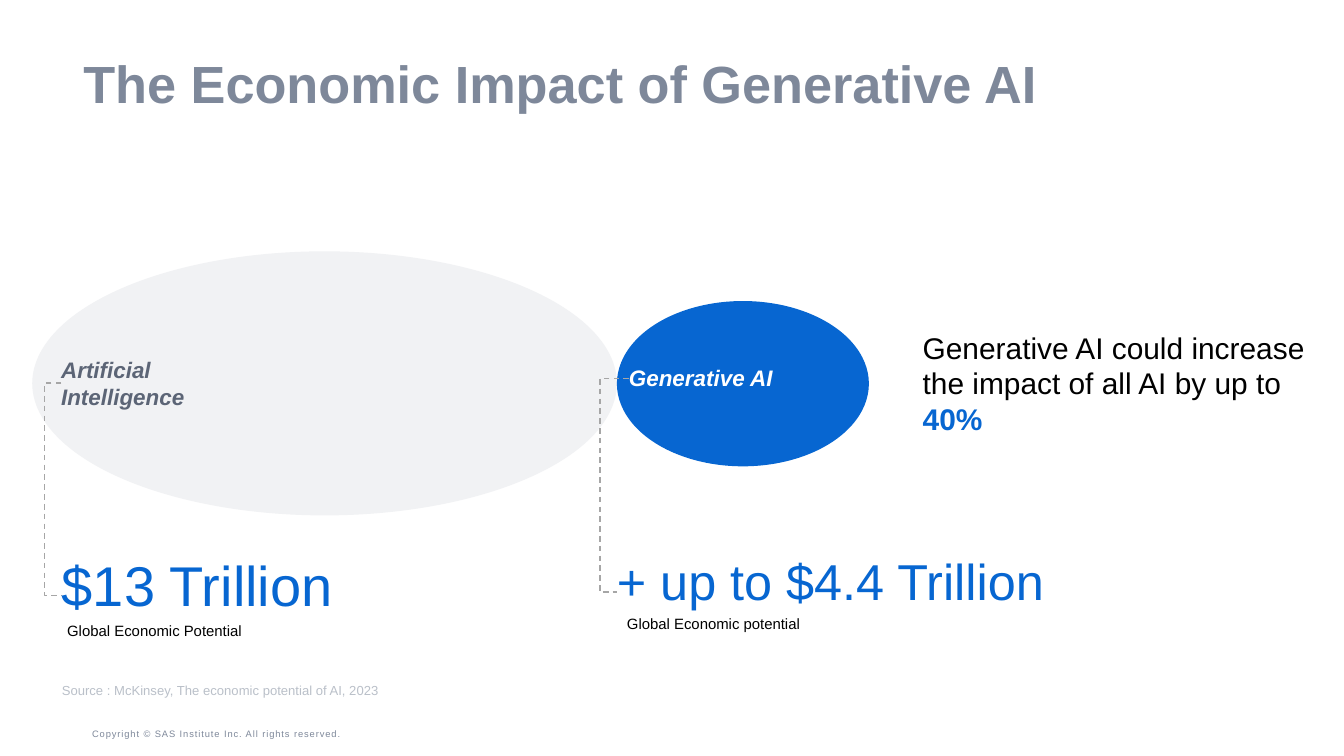
from dataclasses import dataclass

from lxml import etree
from pptx import Presentation
from pptx import util as u
from pptx.dml.color import RGBColor
from pptx.enum import dml, shapes, text
from pptx.oxml.ns import qn

BLUE = "0766D1"
SLATE = "7E889A"
BLACK = "000000"
MIDDLE = text.MSO_ANCHOR.MIDDLE
TOP = text.MSO_ANCHOR.TOP


@dataclass
class Label:
    words: str
    area: tuple[float, float, float, float]
    size: float
    color: str
    bold: bool = False
    italic: bool = False
    anchor: text.MSO_ANCHOR = TOP


@dataclass
class Ellipse:
    area: tuple[float, float, float, float]
    color: str


@dataclass
class Bracket:
    start: tuple[float, float]
    end: tuple[float, float]
    lane: float


@dataclass
class Figure:
    amount: Label
    caption: str
    indent: float


ELLIPSES = [
    Ellipse((0.48, 3.74, 8.7, 3.93), "F1F2F4"),
    Ellipse((9.18, 4.48, 3.75, 2.46), BLUE),
]
BRACKETS = [
    Bracket((9.36, 5.63), (9.18, 8.81), 8.93),
    Bracket((0.91, 5.7), (0.92, 8.86), 0.66),
]
LABELS = [
    Label("The Economic Impact of Generative AI", (1.24, 0.86, 17.25, 0.85), 56, SLATE,
          bold=True, anchor=MIDDLE),
    Label("Artificial Intelligence", (0.91, 5.3, 2.83, 0.81), 24, "5C6576",
          bold=True, italic=True, anchor=MIDDLE),
    Label("Generative AI", (9.36, 5.42, 2.27, 0.4), 24, "FFFFFF",
          bold=True, italic=True, anchor=MIDDLE),
    Label("Source : McKinsey, The economic potential of AI, 2023",
          (0.92, 10.16, 6.04, 0.24), 14, "BAC0C9"),
]
FIGURES = [
    Figure(Label("$13 Trillion", (0.92, 8.19, 4.89, 1.35), 60, BLUE),
           "Global Economic Potential", 0.08),
    Figure(Label("+ up to $4.4 Trillion", (9.18, 8.19, 7.91, 1.25), 54, BLUE),
           "Global Economic potential", 0.15),
]
COPYRIGHT = Label("Copyright © SAS Institute Inc. All rights reserved.",
                  (1.37, 10.83, 5.5, 0.17), 10, SLATE, anchor=text.MSO_ANCHOR.BOTTOM)
CLAIM = Label("Generative AI could increase", (13.73, 4.9, 5.79, 1.62), 32, BLACK)


def rgb(color: str) -> RGBColor:
    return RGBColor.from_string(color)


def format_span(span, size: float, color: str, bold: bool = False, italic: bool = False) -> None:
    span.font.name = "Arial"
    span.font.size = u.Pt(size)
    span.font.color.rgb = rgb(color)
    span.font.bold = bold
    span.font.italic = italic


def add_label(page, label: Label):
    box = page.shapes.add_textbox(*map(u.Inches, label.area))
    frame = box.text_frame
    frame.word_wrap = True
    frame.vertical_anchor = label.anchor
    frame.margin_left = frame.margin_right = frame.margin_top = frame.margin_bottom = 0
    frame.text = label.words
    format_span(frame.paragraphs[0].runs[0], label.size, label.color, label.bold, label.italic)
    return frame


def add_line(frame, words: str, size: float, color: str):
    para = frame.add_paragraph()
    para.text = words
    format_span(para.runs[0], size, color)
    return para


def add_ellipse(page, ellipse: Ellipse) -> None:
    shape = page.shapes.add_shape(shapes.MSO_SHAPE.OVAL, *map(u.Inches, ellipse.area))
    shape.shadow.inherit = False
    shape.fill.solid()
    shape.fill.fore_color.rgb = rgb(ellipse.color)
    shape.line.fill.background()


def add_bracket(page, bracket: Bracket) -> None:
    ends = map(u.Inches, (*bracket.start, *bracket.end))
    connector = page.shapes.add_connector(shapes.MSO_CONNECTOR.ELBOW, *ends)
    connector.line.color.rgb = rgb("A6A6A6")
    connector.line.width = u.Pt(1.5)
    connector.line.dash_style = dml.MSO_LINE.DASH
    left, right = bracket.start[0], bracket.end[0]
    bend = round((bracket.lane - left) / (right - left) * 100000)
    properties = connector._element.spPr
    guides = properties.find(qn("a:prstGeom")).find(qn("a:avLst"))
    etree.SubElement(guides, qn("a:gd"), name="adj1", fmla=f"val {bend}")
    etree.SubElement(properties, qn("a:effectLst"))


def add_figure(page, figure: Figure) -> None:
    frame = add_label(page, figure.amount)
    para = add_line(frame, figure.caption, 16, BLACK)
    para.space_before = u.Pt(4)
    para._p.get_or_add_pPr().set("marL", str(u.Inches(figure.indent)))


def add_claim(page) -> None:
    frame = add_label(page, CLAIM)
    para = add_line(frame, "the impact of all AI by up to ", CLAIM.size, CLAIM.color)
    span = para.add_run()
    span.text = "40%"
    format_span(span, CLAIM.size, BLUE, bold=True)


def add_copyright(page) -> None:
    frame = add_label(page, COPYRIGHT)
    frame.paragraphs[0].runs[0].font._element.set("spc", "100")


def main() -> None:
    deck = Presentation()
    deck.slide_width = u.Inches(20)
    deck.slide_height = u.Inches(11.25)
    page = deck.slides.add_slide(deck.slide_layouts[6])
    for ellipse in ELLIPSES:
        add_ellipse(page, ellipse)
    for bracket in BRACKETS:
        add_bracket(page, bracket)
    for label in LABELS:
        frame = add_label(page, label)
        if label.size == 56:
            frame.paragraphs[0].line_spacing = 0.9
    for figure in FIGURES:
        add_figure(page, figure)
    add_claim(page)
    add_copyright(page)
    deck.save("out.pptx")


if __name__ == "__main__":
    main()
